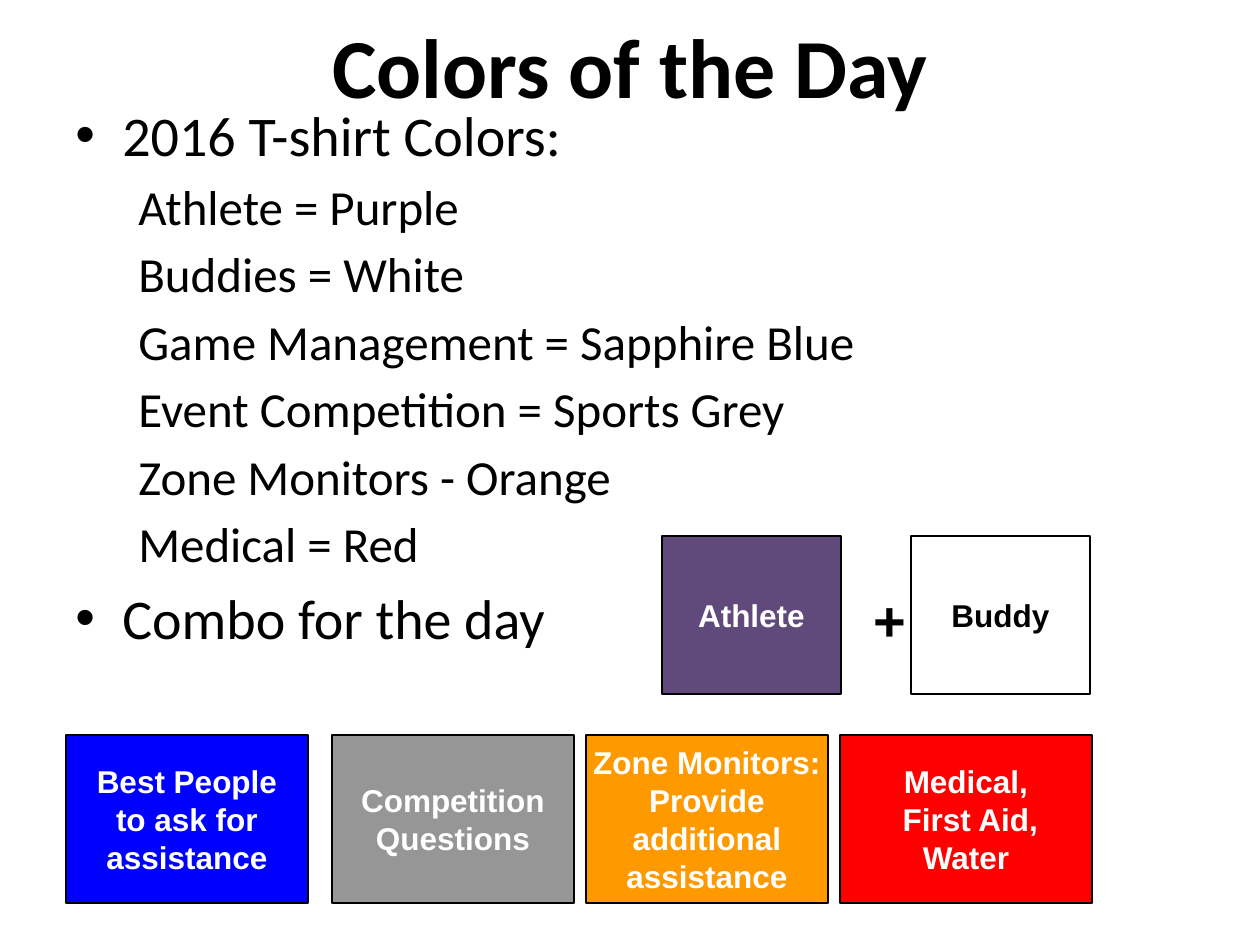
from dataclasses import dataclass

from lxml import etree
from pptx import Presentation
from pptx import util as u
from pptx.dml.color import RGBColor
from pptx.enum import shapes, text
from pptx.oxml import ns

SCALE = u.Inches(1) / 126  # EMU in one px


def px(n):
    return u.Emu(round(n * SCALE))


@dataclass(frozen=True)
class Theme:
    head: str = "Calibri"
    label: str = "Arial"
    black: str = "000000"
    white: str = "FFFFFF"
    purple: str = "604A7B"
    blue: str = "0000FF"
    grey: str = "969696"
    orange: str = "FF9900"
    red: str = "FF0000"
    title: int = 48
    main: int = 32
    sub: int = 28
    small: int = 18


class Deck:
    def __init__(self, theme):
        self.theme = theme
        self.file = Presentation()
        self.file.slide_width, self.file.slide_height = px(1260), px(945)
        self.slide = self.file.slides.add_slide(self.file.slide_layouts[6])

    def style(self, para, font, size, color, bold=False):
        for run in para.runs:
            run.font.name, run.font.size = font, u.Pt(size)
            run.font.bold = bold
            run.font.color.rgb = RGBColor.from_string(color)

    def center(self, frame, words, font, size, color, wrap=False):
        frame.text = words
        frame.word_wrap = wrap
        frame.vertical_anchor = text.MSO_ANCHOR.MIDDLE
        for para in frame.paragraphs:
            para.alignment = text.PP_ALIGN.CENTER
            self.style(para, font, size, color, bold=True)

    def text(self, area, words, font, size, wrap=False):
        box = self.slide.shapes.add_textbox(*map(px, area))
        self.center(box.text_frame, words, font, size, self.theme.black, wrap)

    def list(self, area, items):
        t = self.theme
        frame = self.slide.shapes.add_textbox(*map(px, area)).text_frame
        frame.text = "\n".join(words for _, words in items)
        frame.word_wrap = True
        for i, (level, _) in enumerate(items):
            para = frame.paragraphs[i]
            para.level = level
            props = para._p.get_or_add_pPr()
            left, indent = (63, 0) if level else (47, -47)
            props.set("marL", str(px(left)))
            props.set("indent", str(px(indent)))
            if i:
                para.space_before = u.Pt(5 if level else 6)
            if not level:
                face = etree.SubElement(props, ns.qn("a:buFont"))
                face.set("typeface", t.label)
                mark = etree.SubElement(props, ns.qn("a:buChar"))
                mark.set("char", "•")
            self.style(para, t.head, t.sub if level else t.main, t.black)

    def card(self, area, words, fill, color):
        t = self.theme
        box = self.slide.shapes.add_shape(
            shapes.MSO_SHAPE.RECTANGLE, *map(px, area))
        box.shadow.inherit = False
        box.fill.solid()
        box.fill.fore_color.rgb = RGBColor.from_string(fill)
        box.line.color.rgb = RGBColor.from_string(t.black)
        box.line.width = u.Pt(1.25)
        self.center(box.text_frame, words, t.label, t.small, color)


def main():
    t = Theme()
    deck = Deck(t)

    # Title and list of shirt colors
    deck.text((0, 14, 1260, 101), "Colors of the Day", t.head, t.title, True)
    deck.list((63, 94, 1134, 740), [
        (0, "2016 T-shirt Colors:"),
        (1, "Athlete = Purple"),
        (1, "Buddies = White"),
        (1, "Game Management = Sapphire Blue"),
        (1, "Event Competition = Sports Grey"),
        (1, "Zone Monitors - Orange"),
        (1, "Medical = Red"),
        (0, "Combo for the day"),
    ])

    # Combo: athlete plus buddy
    deck.card((662, 536, 179, 158), "Athlete", t.purple, t.white)
    deck.card((911, 536, 179, 158), "Buddy", t.white, t.black)
    deck.text((861, 588, 42, 63), "+", t.label, t.main)

    # Row of helper shirts
    helpers = [
        (66, 242, "Best People\nto ask for\nassistance", t.blue),
        (332, 242, "Competition\nQuestions", t.grey),
        (586, 242, "Zone Monitors:\nProvide\vadditional\vassistance", t.orange),
        (840, 252, "Medical,\n First Aid,\nWater", t.red),
    ]
    for left, width, words, fill in helpers:
        deck.card((left, 735, width, 168), words, fill, t.white)

    deck.file.save("out.pptx")


if __name__ == "__main__":
    main()
